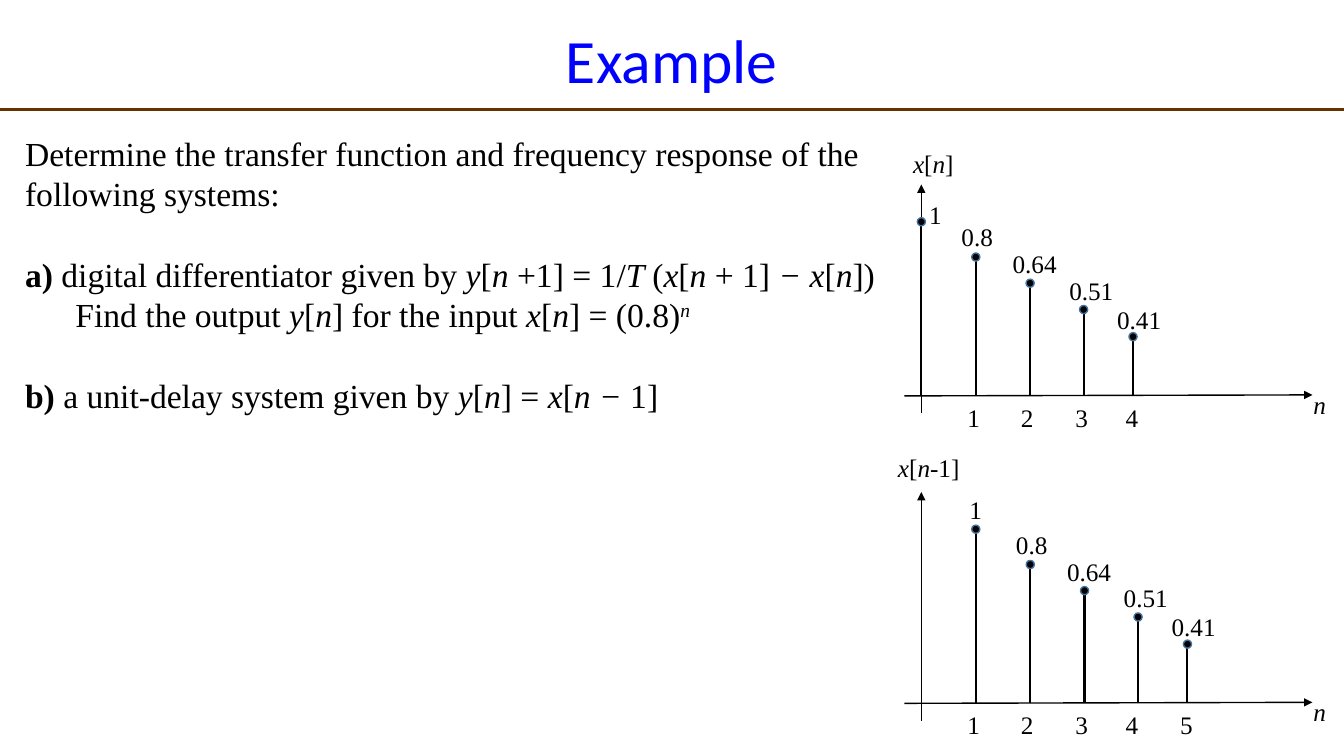
from lxml import etree
from pptx import Presentation
from pptx.dml.color import RGBColor
from pptx.enum.shapes import MSO_CONNECTOR, MSO_SHAPE
from pptx.enum.text import MSO_ANCHOR, MSO_AUTO_SIZE, PP_ALIGN
from pptx.oxml.ns import qn
from pptx.util import Pt

STRAIGHT = MSO_CONNECTOR.STRAIGHT
OVAL = MSO_SHAPE.OVAL
MIDDLE = MSO_ANCHOR.MIDDLE
GROW = MSO_AUTO_SIZE.SHAPE_TO_FIT_TEXT
CENTER = PP_ALIGN.CENTER

BLACK = "000000"
SERIF = "Times New Roman"
BLANK_LINE = 28.8
DOT_SIZE = 5.8
ORIGIN_X = 658.1
STEM_XS = [658.1, 697, 735.8, 774, 809.3]
DOT_TOPS = [155.5, 180.7, 199.4, 218.2, 237.6]
VALUES = ["1", "0.8", "0.64", "0.51", "0.41"]
VALUE_PLACES = [(679.7, 154.8), (716.2, 173.9), (756.7, 193), (790.9, 213.5)]
TICK_XS = [684, 722.2, 761, 797, 835.9]


def color(value):
    return RGBColor.from_string(value)


class SlideBuilder:
    def __init__(self, slide):
        self.slide = slide

    def line(self, start, end, width=1, fill=BLACK, arrow=False):
        points = [Pt(value) for value in (*start, *end)]
        connector = self.slide.shapes.add_connector(STRAIGHT, *points)
        connector.line.color.rgb = color(fill)
        connector.line.width = Pt(width)
        properties = connector._element.spPr
        if arrow:
            outline = properties.find(qn("a:ln"))
            etree.SubElement(outline, qn("a:tailEnd"), type="triangle")
        etree.SubElement(properties, qn("a:effectLst"))

    def dot(self, left, top):
        shape = self.slide.shapes.add_shape(
            OVAL, Pt(left), Pt(top), Pt(DOT_SIZE), Pt(DOT_SIZE))
        shape.shadow.inherit = False
        shape.fill.solid()
        shape.fill.fore_color.rgb = color(BLACK)
        shape.line.color.rgb = color("43739E")
        shape.line.width = Pt(1)

    def box(self, left, top, width, height, wrap=True):
        shape = self.slide.shapes.add_textbox(
            Pt(left), Pt(top), Pt(width), Pt(height))
        shape.text_frame.word_wrap = wrap
        return shape.text_frame

    def add_runs(self, paragraph, pieces, size, font=SERIF, fill=BLACK):
        for text, style in pieces:
            run = paragraph.add_run()
            run.text = text
            run.font.name = font
            run.font.size = Pt(size)
            run.font.color.rgb = color(fill)
            run.font.bold = "b" in style
            run.font.italic = "i" in style
            if "^" in style:
                run.font._element.set("baseline", "30000")

    def title(self, text):
        frame = self.box(5.8, 9.4, 948.2, 72)
        frame.vertical_anchor = MIDDLE
        paragraph = frame.paragraphs[0]
        paragraph.alignment = CENTER
        paragraph.line_spacing = 0.9
        self.add_runs(paragraph, [(text, "")], 44, "Calibri", "0000FF")

    def body(self, paragraphs):
        frame = self.box(10.8, 91.4, 646.6, 200.9)
        frame.auto_size = GROW
        for index, (pieces, indent, space) in enumerate(paragraphs):
            paragraph = frame.add_paragraph() if index else frame.paragraphs[0]
            paragraph.space_before = Pt(space)
            if indent:
                paragraph._p.get_or_add_pPr().set("marL", str(Pt(indent)))
            self.add_runs(paragraph, pieces, 24)

    def label(self, left, top, pieces):
        width = 14.4 + 9 * sum(len(text) for text, style in pieces)
        frame = self.box(left, top, width, 28.8, wrap=False)
        frame.auto_size = GROW
        self.add_runs(frame.paragraphs[0], pieces, 18)

    def plot(self, name, name_place, first_value_place, first, drop):
        shift = 38.9 * first
        base = 282.8 + drop
        self.line((646, base), (937.5, base - 0.7), arrow=True)
        self.line((ORIGIN_X, base + 12.4), (ORIGIN_X, 131.8 + drop), arrow=True)
        for x, top in zip(STEM_XS, DOT_TOPS):
            x, top = x + shift, top + drop
            self.line((x, top + DOT_SIZE / 2), (x, base), width=1.5)
            self.dot(x - DOT_SIZE / 2, top)
        places = [(x + shift, y + drop) for x, y in VALUE_PLACES]
        for place, value in zip([first_value_place, *places], VALUES):
            self.label(*place, [(value, "")])
        for number, x in enumerate(TICK_XS[:4 + first], 1):
            self.label(x, base + 0.9, [(str(number), "")])
        self.label(931, base - 8.5, [("n", "i")])
        self.label(*name_place, name)


def main():
    presentation = Presentation()
    presentation.slide_width = Pt(960)
    presentation.slide_height = Pt(540)
    slide = presentation.slides.add_slide(presentation.slide_layouts[6])
    builder = SlideBuilder(slide)

    builder.title("Example")
    builder.line((0, 78.5), (960, 78.5), width=2.25, fill="663300")
    builder.body([
        ([("Determine the transfer function and frequency response of the "
           "following systems:", "")], 0, 0),
        ([("a)", "b"), (" digital differentiator given by ", ""), ("y", "i"),
          ("[", ""), ("n ", "i"), ("+1] = 1/", ""), ("T ", "i"), ("(", ""),
          ("x", "i"), ("[", ""), ("n ", "i"), ("+ 1] ", ""), ("− x", "i"),
          ("[", ""), ("n", "i"), ("])", "")], 0, BLANK_LINE),
        ([("Find the output ", ""), ("y", "i"), ("[", ""), ("n", "i"),
          ("] for the input ", ""), ("x", "i"), ("[", ""), ("n", "i"),
          ("] = (0.8)", ""), ("n", "i^")], 36, 0),
        ([("b) ", "b"), ("a unit-delay system given by ", ""), ("y", "i"),
          ("[", ""), ("n", "i"), ("] = ", ""), ("x", "i"), ("[", ""),
          ("n − ", "i"), ("1]", "")], 0, BLANK_LINE),
    ])
    builder.plot([("x", "i"), ("[", ""), ("n", "i"), ("]", "")],
                 (645.1, 102.2), (656.6, 139), first=0, drop=0)
    builder.plot([("x", "i"), ("[", ""), ("n", "i"), ("-1]", "")],
                 (634.3, 319.7), (685.4, 349.2), first=1, drop=219.6)
    presentation.save("out.pptx")


if __name__ == "__main__":
    main()
